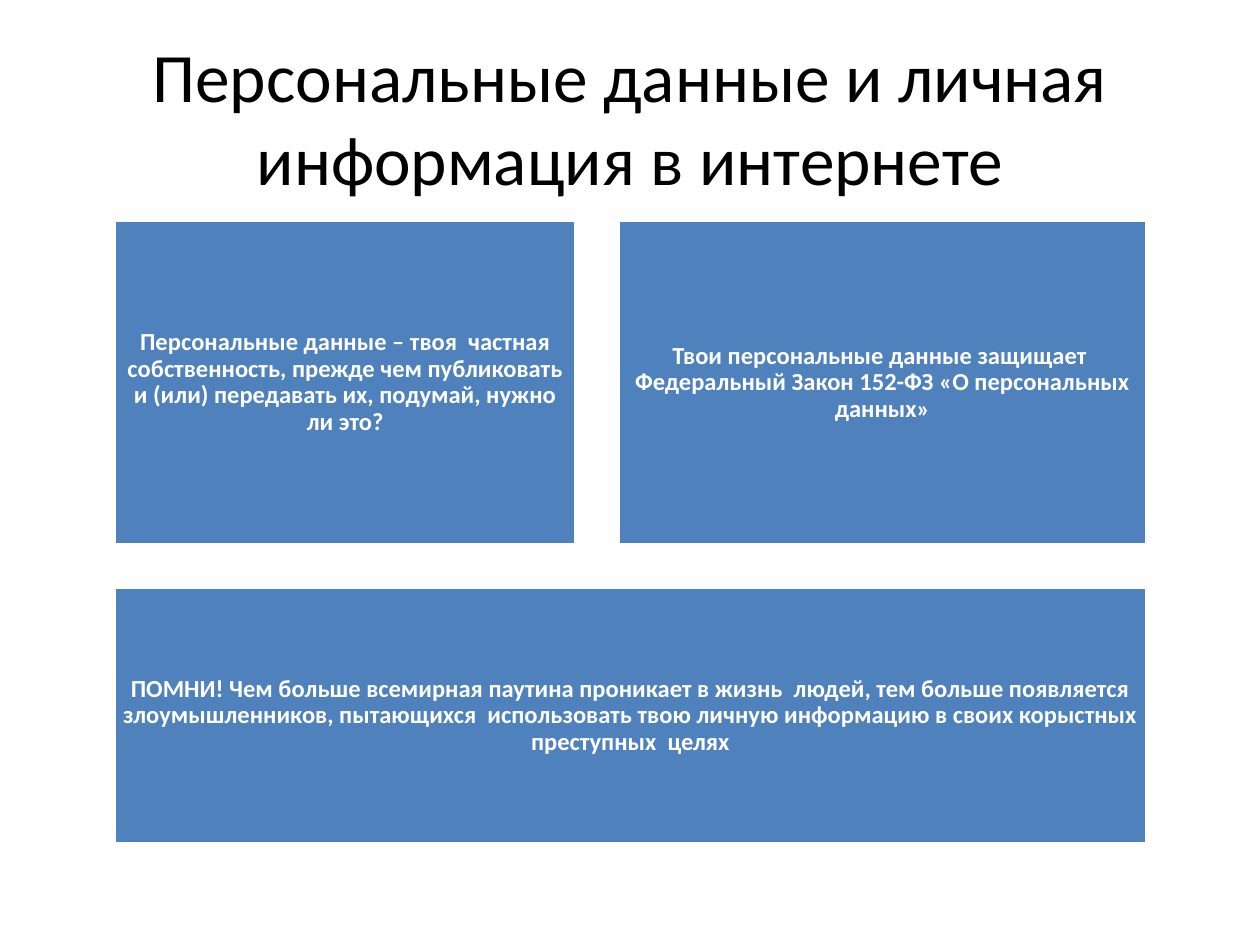
"""Builds a slide about personal data on the internet."""
from pptx import Presentation, util as u
from pptx.dml.color import RGBColor
from pptx.enum import shapes, text

COLOURS = {"title": "000000", "panel": "4F81BD", "light": "FFFFFF"}


class SlideBuilder:
    """Holds the style and the current slide."""

    font_name = "Calibri"
    title_size = 39.6
    panel_size = 14
    panel_inset = u.Cm(0.15)

    def __init__(self, slide):
        self.slide = slide

    def colour(self, name):
        """Return the named colour."""
        return RGBColor.from_string(COLOURS[name])

    def add_paragraph(self, frame, wording, size, colour, bold=False):
        """Fill the frame with one centred paragraph and return it."""
        frame.word_wrap = True
        frame.vertical_anchor = text.MSO_ANCHOR.MIDDLE
        paragraph = frame.paragraphs[0]
        paragraph.alignment = text.PP_ALIGN.CENTER
        run = paragraph.add_run()
        run.text = wording
        run.font.name = self.font_name
        run.font.size = u.Pt(size)
        run.font.bold = bold
        run.font.color.rgb = self.colour(colour)
        return paragraph

    def title(self, wording, left, top, width, height):
        """Add the slide title."""
        box = self.slide.shapes.add_textbox(
            u.Cm(left), u.Cm(top), u.Cm(width), u.Cm(height))
        self.add_paragraph(box.text_frame, wording, self.title_size, "title")

    def panel(self, wording, left, top, width, height):
        """Add a filled rectangle with bold text."""
        shape = self.slide.shapes.add_shape(
            shapes.MSO_SHAPE.RECTANGLE,
            u.Cm(left), u.Cm(top), u.Cm(width), u.Cm(height))
        shape.shadow.inherit = False
        shape.fill.solid()
        shape.fill.fore_color.rgb = self.colour("panel")
        shape.line.color.rgb = self.colour("light")
        shape.line.width = u.Pt(2)
        frame = shape.text_frame
        frame.margin_left = frame.margin_right = self.panel_inset
        frame.margin_top = frame.margin_bottom = self.panel_inset
        paragraph = self.add_paragraph(
            frame, wording, self.panel_size, "light", bold=True)
        paragraph.line_spacing = 0.9
        paragraph.space_after = u.Pt(4.9)


def main():
    """Build and save the presentation."""
    presentation = Presentation()
    presentation.slide_width = u.Cm(25.4)
    presentation.slide_height = u.Cm(19.05)
    builder = SlideBuilder(presentation.slides.add_slide(presentation.slide_layouts[6]))

    left, top, gap = 2.31, 4.45, 0.86
    first_width, second_width = 9.3, 10.64
    upper_height, lower_height = 6.53, 5.18

    builder.title("Персональные данные и личная информация в интернете",
                  1.27, 0.76, 22.86, 3.18)
    builder.panel("Персональные данные – твоя  частная собственность, прежде чем "
                  "публиковать и (или) передавать их, подумай, нужно ли это?",
                  left, top, first_width, upper_height)
    builder.panel("Твои персональные данные защищает  Федеральный Закон 152-ФЗ "
                  "«О персональных данных»",
                  left + first_width + gap, top, second_width, upper_height)
    builder.panel("ПОМНИ! Чем больше всемирная паутина проникает в жизнь  людей, "
                  "тем больше появляется злоумышленников, пытающихся  использовать "
                  "твою личную информацию в своих корыстных преступных  целях",
                  left, top + upper_height + gap,
                  first_width + gap + second_width, lower_height)
    presentation.save("out.pptx")


if __name__ == "__main__":
    main()
